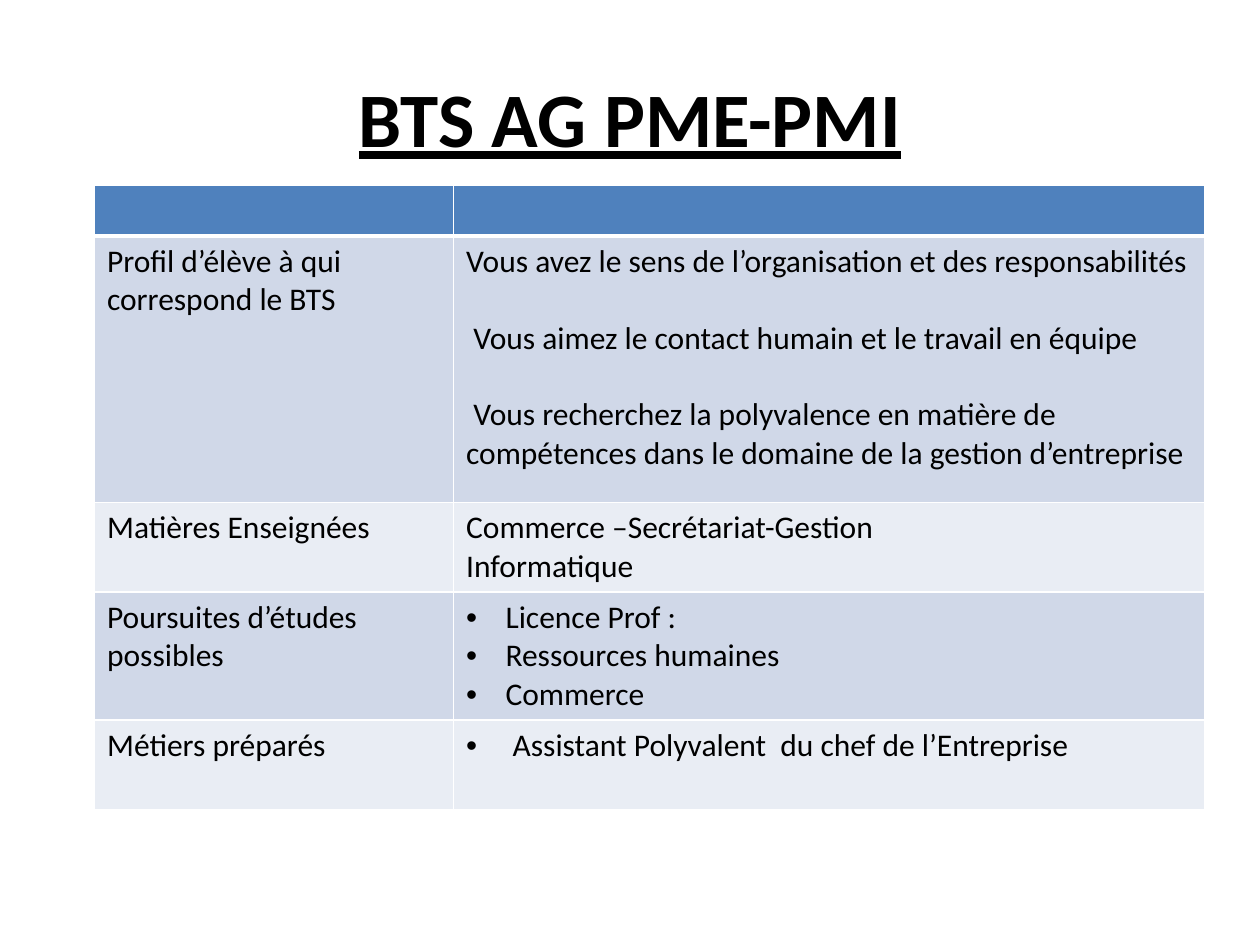
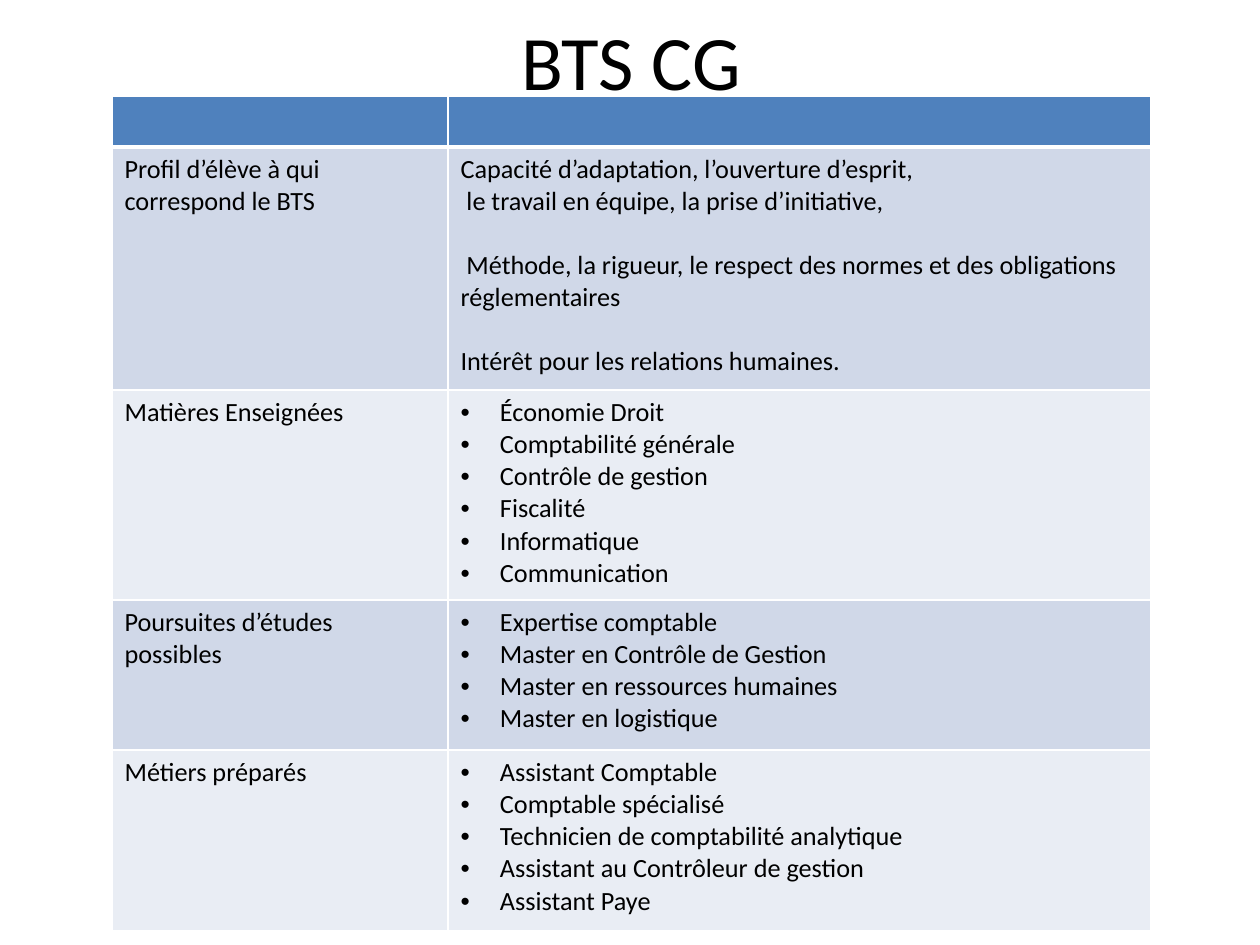
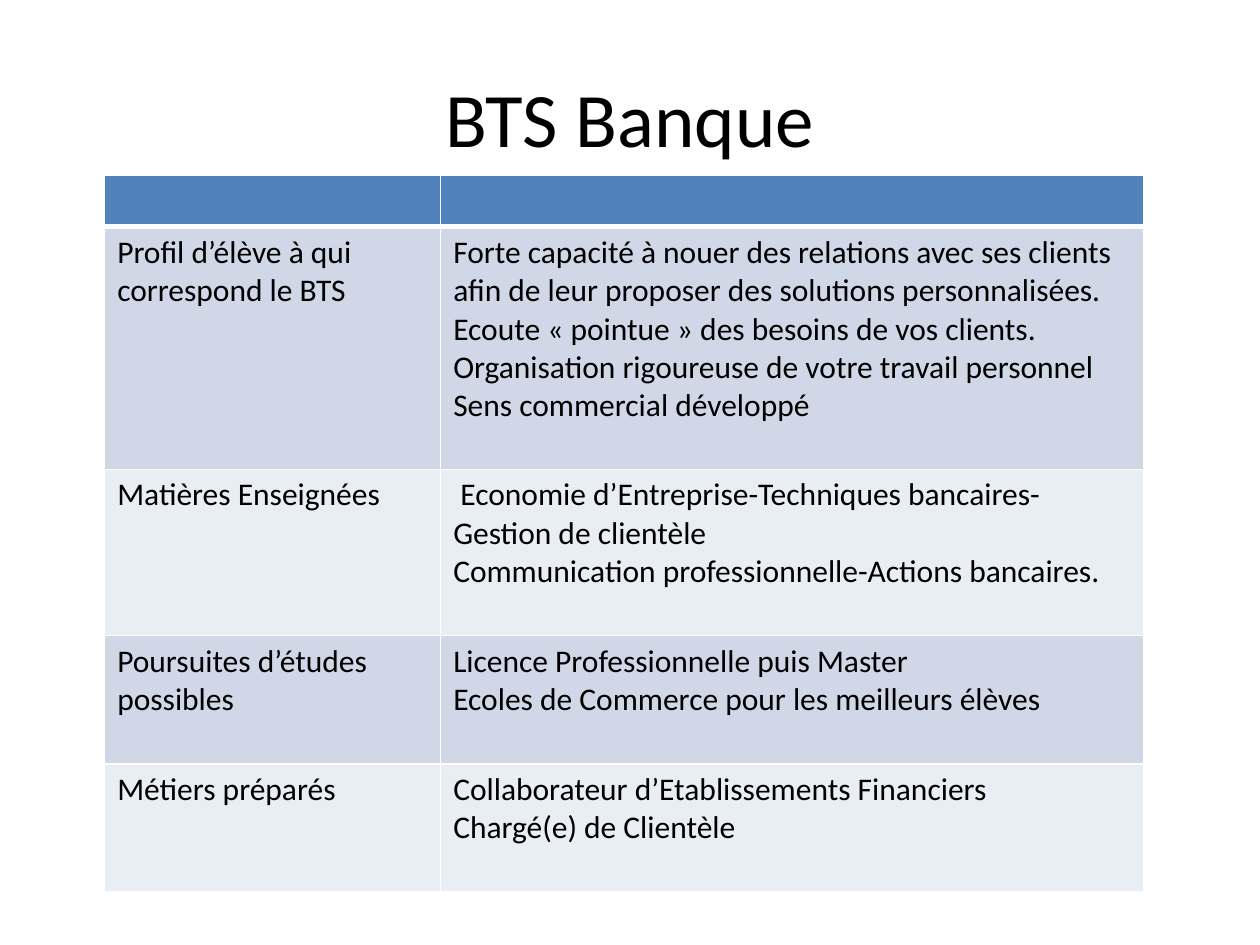
from lxml import etree
from pptx import Presentation
from pptx.dml.color import RGBColor
from pptx.enum.text import MSO_ANCHOR, PP_ALIGN
from pptx.oxml.ns import qn
from pptx.util import Pt

MIDDLE = MSO_ANCHOR.MIDDLE
CENTER = PP_ALIGN.CENTER

FONT = "Calibri"
BLACK, WHITE, BLUE = "000000", "FFFFFF", "4F81BD"
BANDS = ("D0D8E8", "E9EDF4")
INDENT = 22.5
LINE = 1.22  # line height as a share of the text size
HEADS = ("Profil d’élève à qui correspond le BTS", "Matières Enseignées",
         "Poursuites d’études possibles", "Métiers préparés")

# Each body cell is (bulleted, groups of lines); groups are set one line apart.
AG = [
    (False, [["Vous avez le sens de l’organisation et des responsabilités"],
             [" Vous aimez le contact humain et le travail en équipe"],
             [" Vous recherchez la polyvalence en matière de compétences "
              "dans le domaine de la gestion d’entreprise"]]),
    (False, [["Commerce –Secrétariat-Gestion", "Informatique"]]),
    (True, [["Licence Prof :", "Ressources humaines", "Commerce"]]),
    (True, [[" Assistant Polyvalent  du chef de l’Entreprise"]]),
]
CG = [
    (False, [["Capacité d’adaptation, l’ouverture d’esprit,",
              " le travail en équipe, la prise d’initiative,"],
             [" Méthode, la rigueur, le respect des normes et des obligations "
              "réglementaires"],
             ["Intérêt pour les relations humaines."]]),
    (True, [["Économie Droit", "Comptabilité générale", "Contrôle de gestion",
             "Fiscalité", "Informatique", "Communication"]]),
    (True, [["Expertise comptable", "Master en Contrôle de Gestion",
             "Master en ressources humaines", "Master en logistique"]]),
    (True, [["Assistant Comptable", "Comptable spécialisé",
             "Technicien de comptabilité analytique",
             "Assistant au Contrôleur de gestion", "Assistant Paye"]]),
]
BANK = [
    (False, [["Forte capacité à nouer des relations avec ses clients afin de "
              "leur proposer des solutions personnalisées. Ecoute « pointue » "
              "des besoins de vos clients. Organisation rigoureuse de votre "
              "travail personnel", "Sens commercial développé"]]),
    (False, [[" Economie d’Entreprise-Techniques bancaires-  Gestion de clientèle",
              "Communication professionnelle-Actions bancaires."]]),
    (False, [["Licence Professionnelle puis Master",
              "Ecoles de Commerce pour les meilleurs élèves"]]),
    (False, [["Collaborateur d’Etablissements Financiers",
              "Chargé(e) de Clientèle"]]),
]


def color(code):
    return RGBColor.from_string(code)


def style(para, size):
    for run in para.runs:
        font = run.font
        font.name, font.size = FONT, Pt(size)
        font.color.rgb = color(BLACK)


def bullet(para):
    props = para._p.get_or_add_pPr()
    props.set("marL", str(Pt(INDENT)))
    props.set("indent", str(-Pt(INDENT)))
    etree.SubElement(props, qn("a:buFont"), typeface="Arial")
    etree.SubElement(props, qn("a:buChar"), char="•")


def paint(cell, fill, top=1, bottom=1):
    """Fill a cell and rule its four sides in white."""
    cell.fill.solid()
    cell.fill.fore_color.rgb = color(fill)
    props = cell._tc.get_or_add_tcPr()
    sides = (("a:lnL", 1), ("a:lnR", 1), ("a:lnT", top), ("a:lnB", bottom))
    for i, (tag, width) in enumerate(sides):
        line = etree.Element(qn(tag), w=str(Pt(width)))
        solid = etree.SubElement(line, qn("a:solidFill"))
        etree.SubElement(solid, qn("a:srgbClr"), val=WHITE)
        props.insert(i, line)


def write(cell, groups, size, dots=False):
    frame = cell.text_frame
    frame.text = "\n".join(line for group in groups for line in group)
    for para in frame.paragraphs:
        style(para, size)
        if dots:
            bullet(para)
    start = 0
    for group in groups[:-1]:
        start += len(group)
        frame.paragraphs[start].space_before = Pt(size * LINE)


def add_title(slide, text, box, strong):
    title = slide.shapes.title
    title.left, title.top, title.width, title.height = map(Pt, box)
    frame = title.text_frame
    frame.text = text
    frame.vertical_anchor = MIDDLE
    para = frame.paragraphs[0]
    para.alignment = CENTER
    style(para, 44)
    if strong:
        para.runs[0].font.bold = para.runs[0].font.underline = True


def add_grid(slide, spot, cols, rows, body, size):
    left, top = spot
    shape = slide.shapes.add_table(len(rows), len(cols), Pt(left), Pt(top),
                                   Pt(sum(cols)), Pt(sum(rows)))
    table = shape.table
    for col, width in zip(table.columns, cols):
        col.width = Pt(width)
    for row, height in zip(table.rows, rows):
        row.height = Pt(height)
    for cell in table.rows[0].cells:
        paint(cell, BLUE, bottom=3)
    for i, (head, (dots, groups)) in enumerate(zip(HEADS, body)):
        name, text = table.rows[i + 1].cells
        write(name, [[head]], size)
        write(text, groups, size, dots)
        for cell in (name, text):
            paint(cell, BANDS[i % 2], top=1 if i else 3)


def add_course(deck, name, box, spot, cols, rows, body, size=18, strong=False):
    slide = deck.slides.add_slide(deck.slide_layouts[5])
    add_title(slide, name, box, strong)
    add_grid(slide, spot, cols, rows, body, size)


def main():
    deck = Presentation()
    deck.slide_width, deck.slide_height = Pt(720), Pt(540)
    box = (36, 21.6, 648, 90)
    cols = (192, 401.6)
    add_course(deck, "BTS AG PME-PMI", box, (54, 105.6), (205.2, 429.4),
               (29, 152.3, 51.3, 73.2, 51), AG, strong=True)
    add_course(deck, "BTS CG", (36.7, 2.9, 648, 62.6), (64, 54.8), cols,
               (28.8, 139, 120, 85.7, 103), CG, size=15)
    add_course(deck, "BTS Banque", box, (59.8, 100.4), cols,
               (29, 138.7, 95, 73.2, 73.2), BANK)
    deck.save("out.pptx")


if __name__ == "__main__":
    main()
